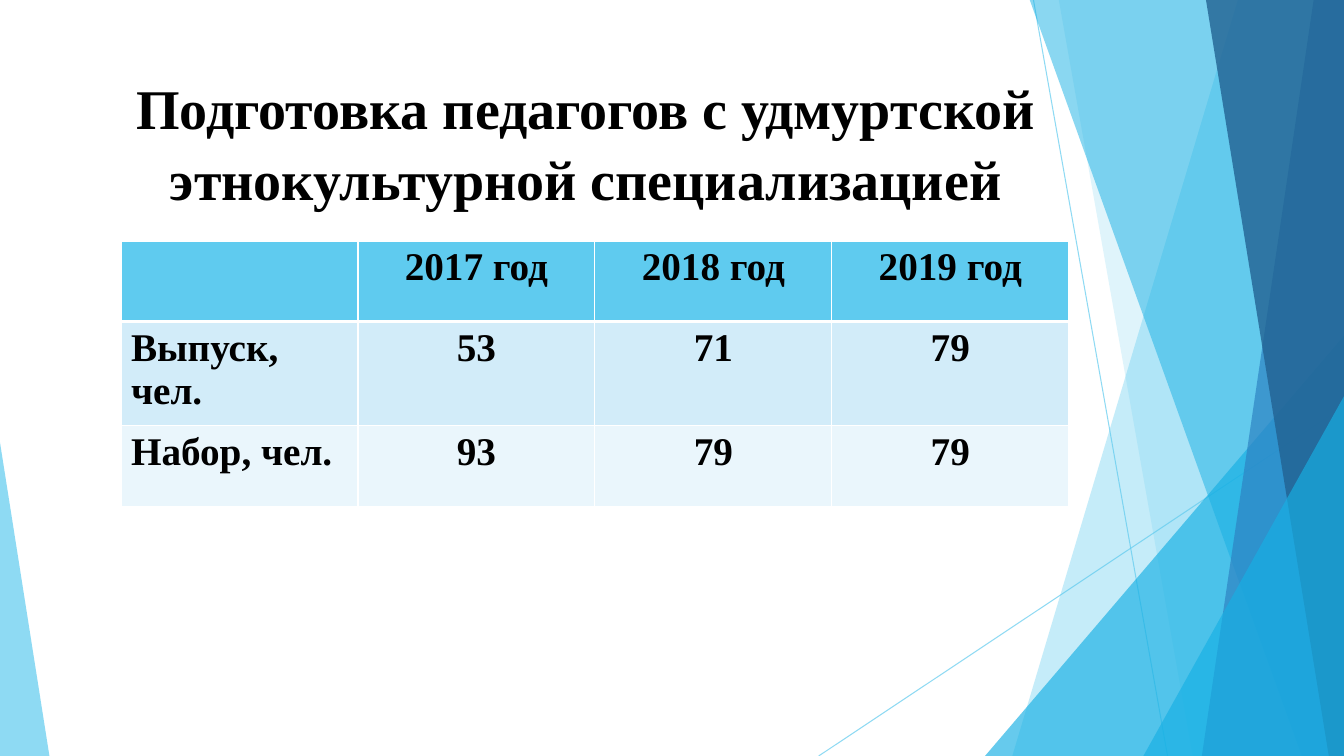
import dataclasses

import pptx
import pptx.dml.color
import pptx.enum.shapes
import pptx.enum.text
import pptx.oxml
import pptx.oxml.ns
import pptx.util

Inches = pptx.util.Inches
Pt = pptx.util.Pt
CENTER = pptx.enum.text.PP_ALIGN.CENTER
LEFT = pptx.enum.text.PP_ALIGN.LEFT


@dataclasses.dataclass(frozen=True)
class Theme:
    """Colours, font and type sizes of the slide."""
    font: str = "Times New Roman"
    title_size: int = 40
    table_size: int = 28
    text: str = "000000"
    border: str = "FFFFFF"
    sky: str = "5FCBEF"
    cyan: str = "17B0E4"
    blue: str = "2E83C3"
    navy: str = "226292"
    row_fills: tuple = ("5FCBEF", "D2ECF9", "EAF6FC")


THEME = Theme()
TITLE = "Подготовка педагогов с удмуртской этнокультурной специализацией"
TABLE_ROWS = (
    ("", "2017 год", "2018 год", "2019 год"),
    ("Выпуск, чел.", "53", "71", "79"),
    ("Набор, чел.", "93", "79", "79"),
)


def rgb(colour):
    """Return an RGB colour from its hex digits."""
    return pptx.dml.color.RGBColor.from_string(colour)


def set_alpha(element, percent):
    """Set the opacity of the first colour inside an element."""
    colour = next(element.iter(pptx.oxml.ns.qn("a:srgbClr")))
    alpha = colour.makeelement(pptx.oxml.ns.qn("a:alpha"), {"val": str(percent * 1000)})
    colour.append(alpha)


def paint(facet, colour, opacity):
    """Give a facet a translucent fill without outline or shadow."""
    facet.shadow.inherit = False
    facet.fill.solid()
    facet.fill.fore_color.rgb = rgb(colour)
    set_alpha(facet.element.spPr, opacity)
    facet.line.fill.background()


def add_ray(slide, start, end):
    """Draw a thin translucent line between two points."""
    ray = slide.shapes.add_connector(
        pptx.enum.shapes.MSO_CONNECTOR.STRAIGHT, *map(Inches, start + end))
    ray.line.color.rgb = rgb(THEME.sky)
    ray.line.width = Pt(0.75)
    set_alpha(ray.element.spPr, 70)
    ray.element.spPr.append(
        ray.element.makeelement(pptx.oxml.ns.qn("a:effectLst"), {}))


def add_band(slide, top_left, bottom_left, colour, opacity):
    """Draw a full-height band from a slanted left edge to the slide's right edge."""
    top, bottom, right = -0.01, 7.5, 13.33
    outline = slide.shapes.build_freeform(
        Inches(top_left), Inches(top), scale=1.0)
    corners = ((right, top), (right, bottom), (bottom_left, bottom))
    outline.add_line_segments([tuple(map(Inches, corner)) for corner in corners])
    paint(outline.convert_to_shape(), colour, opacity)


def add_corner(slide, box, apex, colour, opacity):
    """Draw a right triangle whose apex is at the given share of its width."""
    corner = slide.shapes.add_shape(
        pptx.enum.shapes.MSO_SHAPE.ISOSCELES_TRIANGLE, *map(Inches, box))
    corner.adjustments[0] = apex
    paint(corner, colour, opacity)


def write(paragraph, text, size, alignment):
    """Write bold text in the theme font into a paragraph."""
    paragraph.alignment = alignment
    run = paragraph.add_run()
    run.text = text
    formats = {"name": THEME.font, "size": Pt(size), "bold": True}
    for name, value in formats.items():
        setattr(run.font, name, value)
    run.font.color.rgb = rgb(THEME.text)


def add_title(slide):
    """Add the centred slide title."""
    title = slide.shapes.add_textbox(*map(Inches, (1.11, 0.63, 9.4, 1.44)))
    title.text_frame.word_wrap = True
    paragraph = title.text_frame.paragraphs[0]
    paragraph.line_spacing = 1.07
    paragraph.space_after = Pt(8)
    write(paragraph, TITLE, THEME.title_size, CENTER)


def set_borders(cell, bottom_width):
    """Draw white borders round a cell."""
    properties = cell._tc.get_or_add_tcPr()
    widths = {"lnL": 1, "lnR": 1, "lnT": 1, "lnB": bottom_width}
    for position, (side, width) in enumerate(widths.items()):
        border = pptx.oxml.parse_xml(
            f'<a:{side} {pptx.oxml.ns.nsdecls("a")} w="{Pt(width)}"><a:solidFill>'
            f'<a:srgbClr val="{THEME.border}"/></a:solidFill></a:{side}>')
        properties.insert(position, border)


def add_table(slide):
    """Add the table of graduates and entrants by year."""
    frame = slide.shapes.add_table(
        len(TABLE_ROWS), len(TABLE_ROWS[0]), *map(Inches, (1.2, 2.39, 9.4, 2.4)))
    for row, texts, fill in zip(frame.table.rows, TABLE_ROWS, THEME.row_fills):
        is_header = texts is TABLE_ROWS[0]
        for column, (cell, text) in enumerate(zip(row.cells, texts)):
            cell.fill.solid()
            cell.fill.fore_color.rgb = rgb(fill)
            set_borders(cell, 3 if is_header else 1)
            if text:
                write(cell.text_frame.paragraphs[0], text, THEME.table_size,
                      CENTER if column else LEFT)


def add_backdrop(slide):
    """Draw the rays and translucent facets at the slide's edges."""
    add_ray(slide, (10.25, 0), (11.58, 7.5))
    add_ray(slide, (13.33, 4.03), (8.12, 7.5))
    add_band(slide, 12.28, 10.04, THEME.sky, 36)
    add_band(slide, 10.5, 11.83, THEME.sky, 20)
    add_corner(slide, (9.77, 3.33, 3.56, 4.17), 1, THEME.cyan, 66)
    add_band(slide, 10.21, 12.91, THEME.cyan, 50)
    add_band(slide, 13.03, 11.92, THEME.blue, 70)
    add_band(slide, 11.96, 13.18, THEME.navy, 80)
    add_corner(slide, (11.34, 3.93, 1.99, 3.57), 1, THEME.cyan, 66)
    add_corner(slide, (0, 4.39, 0.49, 3.11), 0, THEME.sky, 70)


def main():
    """Build the slide and save it."""
    presentation = pptx.Presentation()
    presentation.slide_width = Inches(13.33)
    presentation.slide_height = Inches(7.5)
    slide = presentation.slides.add_slide(presentation.slide_layouts[6])
    add_backdrop(slide)
    add_title(slide)
    add_table(slide)
    presentation.save("out.pptx")


if __name__ == "__main__":
    main()
